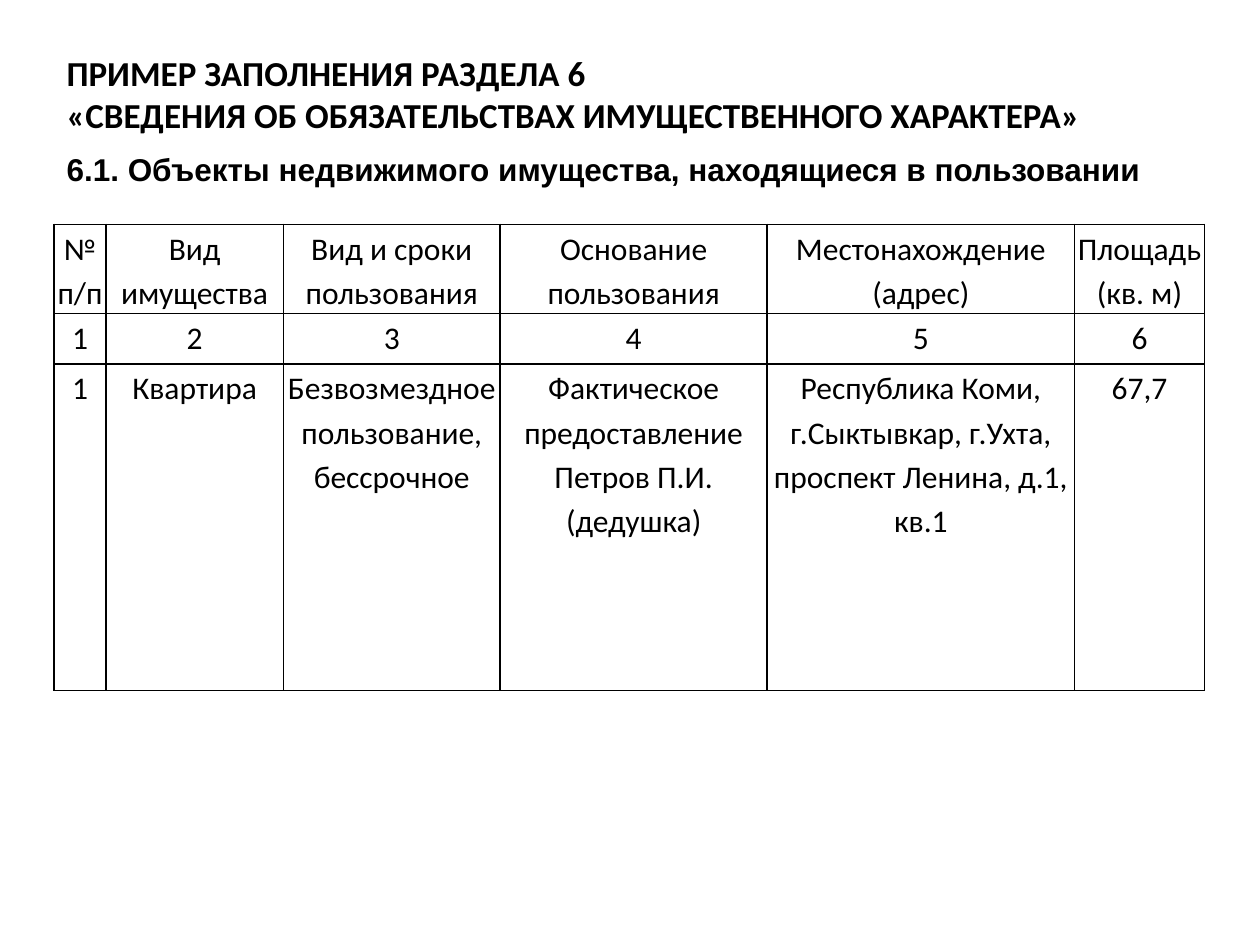
from lxml import etree
from pptx import Presentation
from pptx.dml.color import RGBColor
from pptx.enum.text import MSO_AUTO_SIZE, PP_ALIGN
from pptx.oxml.ns import qn
from pptx.util import Inches, Pt

LEFT, CENTER = PP_ALIGN.LEFT, PP_ALIGN.CENTER
GROW = MSO_AUTO_SIZE.SHAPE_TO_FIT_TEXT
COLORS = {"ink": "000000", "paper": "FFFFFF"}

COLUMN_WIDTHS = [0.41, 1.41, 1.72, 2.12, 2.44, 1.03]
ROW_HEIGHTS = [0.71, 0.4, 2.59]
PROPERTY_ROWS = [
    ["№\nп/п", "Вид имущества", "Вид и сроки пользования",
     "Основание пользования", "Местонахождение (адрес)", "Площадь\n(кв. м)"],
    ["1", "2", "3", "4", "5", "6"],
    ["1", "Квартира", "Безвозмездное пользование, бессрочное",
     "Фактическое предоставление Петров П.И. (дедушка)",
     "Республика Коми, г.Сыктывкар, г.Ухта, проспект Ленина, д.1, кв.1",
     "67,7"],
]


def write_text(frame, text, font="Calibri", size=18, bold=False,
               color="ink", align=LEFT, spacing=None):
    """Fill a text frame with one paragraph; a newline is a line break."""
    para = frame.paragraphs[0]
    para.text = text
    para.alignment = align
    if spacing:
        para.line_spacing = spacing
    for span in para.runs:
        span.font.name = font
        span.font.size = Pt(size)
        span.font.bold = bold
        span.font.color.rgb = RGBColor.from_string(COLORS[color])


class PageBuilder:
    def __init__(self, page):
        self.page = page
        self.border_width = Pt(1)
        self.cell_inset = Inches(0.02)

    def text(self, left, top, width, height, text, **style):
        box = self.page.shapes.add_textbox(
            Inches(left), Inches(top), Inches(width), Inches(height))
        box.text_frame.word_wrap = True
        box.text_frame.auto_size = GROW
        write_text(box.text_frame, text, **style)

    def table(self, left, top, widths, heights, rows):
        table = self.page.shapes.add_table(
            len(heights), len(widths), Inches(left), Inches(top),
            Inches(sum(widths)), Inches(sum(heights))).table
        for column, width in zip(table.columns, widths):
            column.width = Inches(width)
        for row, height, texts in zip(table.rows, heights, rows):
            row.height = Inches(height)
            for cell, text in zip(row.cells, texts):
                self.cell(cell, text)

    def cell(self, cell, text):
        cell.margin_left = cell.margin_right = self.cell_inset
        cell.margin_top = cell.margin_bottom = 0
        write_text(cell.text_frame, text, align=CENTER, spacing=1.15)
        # Borders come before the fill in the cell properties
        properties = cell._tc.get_or_add_tcPr()
        for side in ("lnL", "lnR", "lnT", "lnB"):
            line = etree.SubElement(properties, qn(f"a:{side}"),
                                    w=str(self.border_width))
            fill = etree.SubElement(line, qn("a:solidFill"))
            etree.SubElement(fill, qn("a:srgbClr"), val=COLORS["ink"])
        cell.fill.solid()
        cell.fill.fore_color.rgb = RGBColor.from_string(COLORS["paper"])


def main():
    deck = Presentation()
    deck.slide_width, deck.slide_height = Inches(10), Inches(7.5)
    builder = PageBuilder(deck.slides.add_slide(deck.slide_layouts[6]))

    # Section subtitle and title
    builder.text(0.43, 1.14, 8.94, 0.4,
                 "6.1. Объекты недвижимого имущества, находящиеся в пользовании",
                 font="Arial", bold=True)
    builder.text(0.43, 0.36, 9.37, 0.77,
                 "ПРИМЕР ЗАПОЛНЕНИЯ РАЗДЕЛА 6\n"
                 "«СВЕДЕНИЯ ОБ ОБЯЗАТЕЛЬСТВАХ ИМУЩЕСТВЕННОГО ХАРАКТЕРА»",
                 size=20, bold=True)

    # Property in use
    builder.table(0.43, 1.78, COLUMN_WIDTHS, ROW_HEIGHTS, PROPERTY_ROWS)

    deck.save("out.pptx")


if __name__ == "__main__":
    main()
